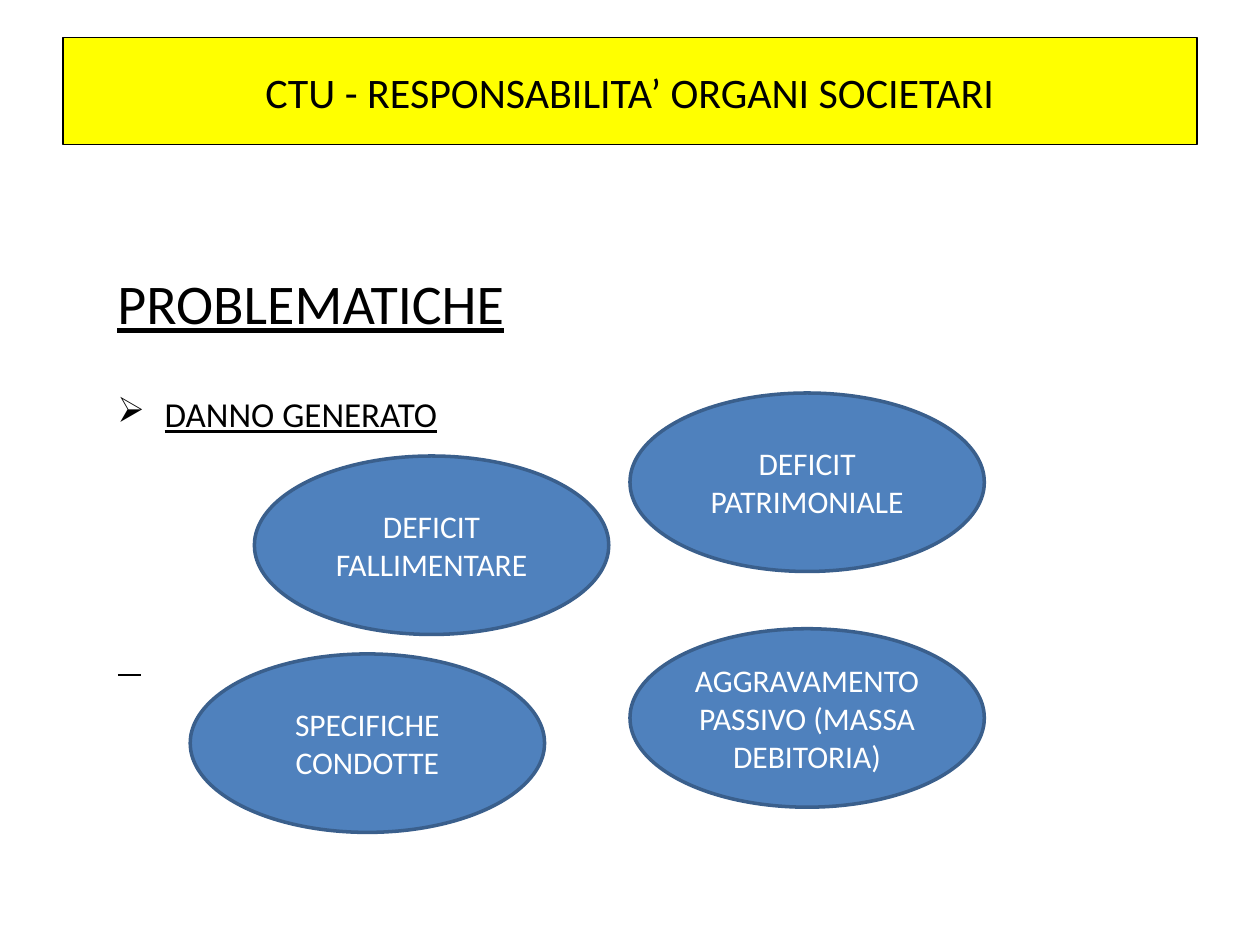
from lxml import etree
from pptx import Presentation
from pptx.dml.color import RGBColor
from pptx.enum.shapes import MSO_CONNECTOR, MSO_SHAPE
from pptx.enum.text import MSO_ANCHOR, PP_ALIGN
from pptx.oxml.ns import qn
from pptx.util import Pt

RECTANGLE, OVAL = MSO_SHAPE.RECTANGLE, MSO_SHAPE.OVAL
STRAIGHT = MSO_CONNECTOR.STRAIGHT
MIDDLE, CENTER = MSO_ANCHOR.MIDDLE, PP_ALIGN.CENTER


def color(value):
    return RGBColor.from_string(value)


def write(paragraph, text, text_color, **format_values):
    run = paragraph.add_run()
    run.text = text
    run.font.color.rgb = color(text_color)
    for name, value in {"name": "Calibri", **format_values}.items():
        setattr(run.font, name, value)


presentation = Presentation()
presentation.slide_width, presentation.slide_height = Pt(720), Pt(540)
slide = presentation.slides.add_slide(presentation.slide_layouts[6])

# Heading and the bulleted topic
text_box = slide.shapes.add_textbox(Pt(60), Pt(150), Pt(648), Pt(356))
text_box.text_frame.word_wrap = True
heading = text_box.text_frame.paragraphs[0]
write(heading, "PROBLEMATICHE", "000000", size=Pt(32), underline=True)

topic = text_box.text_frame.add_paragraph()
topic.space_before = Pt(32.5)
write(topic, "DANNO GENERATO", "000000", size=Pt(20), underline=True)
properties = topic._p.get_or_add_pPr()
properties.set("marL", str(Pt(27)))
properties.set("indent", str(Pt(-27)))
etree.SubElement(properties, qn("a:buChar")).set("char", "➢")

# Short dash at the left margin
dash = slide.shapes.add_connector(STRAIGHT, Pt(67.4), Pt(385.8), Pt(80.6), Pt(385.8))
dash.line.color.rgb = color("000000")
dash.line.width = Pt(1.5)
etree.SubElement(dash._element.spPr, qn("a:effectLst"))

# Title bar and the four kinds of damage
bar_style = ("FFFF00", "000000", 0.75, "000000", 24)
oval_style = ("4F81BD", "3A5F8C", 2, "FFFFFF", 18)
oval_size = (202.5, 102)
labelled_shapes = [
    (RECTANGLE, "CTU - RESPONSABILITA’ ORGANI SOCIETARI", (36, 21.6, 648, 61.2), bar_style),
    (OVAL, "DEFICIT PATRIMONIALE", (360, 224.6, *oval_size), oval_style),
    (OVAL, "AGGRAVAMENTO PASSIVO (MASSA DEBITORIA)", (360, 359.3, *oval_size), oval_style),
    (OVAL, "DEFICIT FALLIMENTARE", (145.4, 260.6, *oval_size), oval_style),
    (OVAL, "SPECIFICHE CONDOTTE", (108.7, 373.7, *oval_size), oval_style),
]
for kind, label, box, style in labelled_shapes:
    fill, outline, width, text_color, size = style
    shape = slide.shapes.add_shape(kind, *map(Pt, box))
    shape.shadow.inherit = False
    shape.fill.solid()
    shape.fill.fore_color.rgb = color(fill)
    shape.line.color.rgb = color(outline)
    shape.line.width = Pt(width)
    shape.text_frame.word_wrap = True
    shape.text_frame.vertical_anchor = MIDDLE
    paragraph = shape.text_frame.paragraphs[0]
    paragraph.alignment = CENTER
    write(paragraph, label, text_color, size=Pt(size))

presentation.save("out.pptx")
